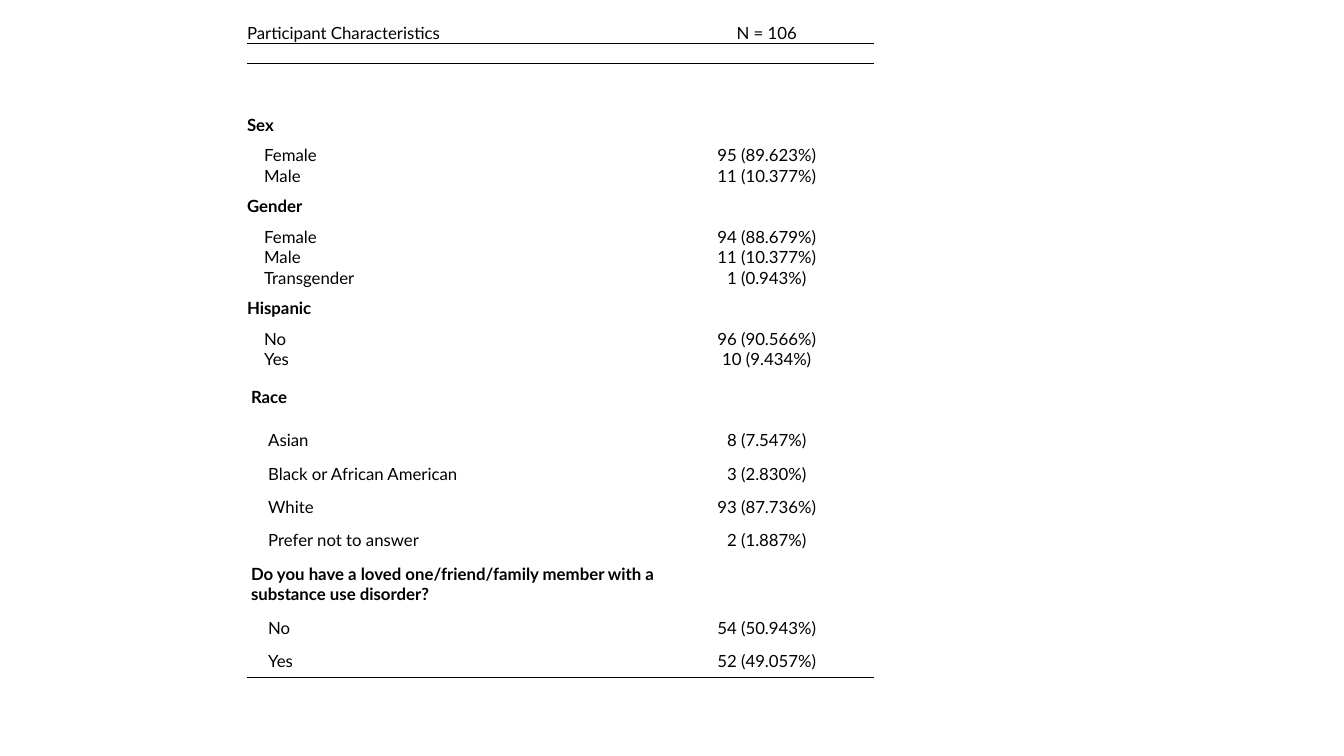
from lxml import etree
from pptx import Presentation
from pptx.dml.color import RGBColor
from pptx.enum import text
from pptx.oxml import ns
from pptx.util import Inches, Pt

BLACK = RGBColor(0x00, 0x00, 0x00)
FONT = "Lato"
SIZE = 12
INDENT = 0.17
NO_STYLE = "{2D5ABB26-0587-4C30-8999-92F81FD0307C}"
TIGHT, ROOMY = (0, 0), (0.04, 0.06)  # side and top/bottom cell margins
# margins, heading row height, answer row height, groups
SECTIONS = [
    (TIGHT, 0.41, 0.2, [
        ("Sex", [("Female", "95 (89.623%)"), ("Male", "11 (10.377%)")]),
        ("Gender", [("Female", "94 (88.679%)"), ("Male", "11 (10.377%)"),
                    ("Transgender", "1 (0.943%)")]),
        ("Hispanic", [("No", "96 (90.566%)"), ("Yes", "10 (9.434%)")]),
    ]),
    (ROOMY, 0.54, 0.33, [
        ("Race", [("Asian", "8 (7.547%)"),
                  ("Black or African American", "3 (2.830%)"),
                  ("White", "93 (87.736%)"),
                  ("Prefer not to answer", "2 (1.887%)")]),
        ("Do you have a loved one/friend/family member with a "
         "substance use disorder?",
         [("No", "54 (50.943%)"), ("Yes", "52 (49.057%)")]),
    ]),
]


def table_rows():
    """List each row as label, value, height, margins, is heading, is answer."""
    rows = [("Participant Characteristics", "N = 106", 0.2, TIGHT, False, False)]
    rows += [("", "", 0.2, TIGHT, False, False)] * 3
    for margins, heading_h, answer_h, groups in SECTIONS:
        for heading, answers in groups:
            rows.append((heading, "", heading_h, margins, True, False))
            rows += [(label, value, answer_h, margins, False, True)
                     for label, value in answers]
    return rows


def fill_cell(cell, words, margins, bold=False, indent=0, centred=False):
    side, edge = margins
    cell.margin_left = cell.margin_right = Inches(side)
    cell.margin_top = cell.margin_bottom = Inches(edge)
    cell.vertical_anchor = text.MSO_ANCHOR.MIDDLE
    cell.fill.background()
    cell.text_frame.text = words
    p = cell.text_frame.paragraphs[0]
    if centred:
        p.alignment = text.PP_ALIGN.CENTER
    if indent:
        p._p.get_or_add_pPr().set("marL", str(Inches(indent)))
    for r in p.runs:
        r.font.name, r.font.size, r.font.bold = FONT, Pt(SIZE), bold
        r.font.color.rgb = BLACK
    if not words:
        # An empty cell needs its own text size to keep the row low
        end = etree.SubElement(p._p, ns.qn("a:endParaRPr"), sz=str(SIZE * 100))
        etree.SubElement(end, ns.qn("a:latin"), typeface=FONT)


def add_border(cell, side):
    """Draw a thin black border; side is T or B."""
    ln = etree.Element(ns.qn("a:ln" + side), w=str(Pt(1)))
    fill = etree.SubElement(ln, ns.qn("a:solidFill"))
    etree.SubElement(fill, ns.qn("a:srgbClr"), val=str(BLACK))
    cell._tc.get_or_add_tcPr().insert(0, ln)


def add_characteristics_table(s):
    rows = table_rows()
    frame = s.shapes.add_table(len(rows), 2, Inches(2.45), Inches(0.23),
                               Inches(6.22), Inches(6.5))
    table = frame.table
    table.first_row = table.horz_banding = False
    table._tbl.tblPr.find(ns.qn("a:tableStyleId")).text = NO_STYLE
    for column, width in zip(table.columns, (4.09, 2.13)):
        column.width = Inches(width)
    for i, (label, value, height, margins, heading, answer) in enumerate(rows):
        table.rows[i].height = Inches(height)
        fill_cell(table.cell(i, 0), label, margins, bold=heading,
                  indent=INDENT if answer else 0)
        fill_cell(table.cell(i, 1), value, margins, centred=True)
    for i, side in ((0, "B"), (1, "T"), (len(rows) - 1, "B")):
        for j in range(2):
            add_border(table.cell(i, j), side)


def main():
    prs = Presentation()
    prs.slide_width, prs.slide_height = Inches(13.33), Inches(7.5)
    s = prs.slides.add_slide(prs.slide_layouts[6])
    add_characteristics_table(s)
    prs.save("out.pptx")


if __name__ == "__main__":
    main()
